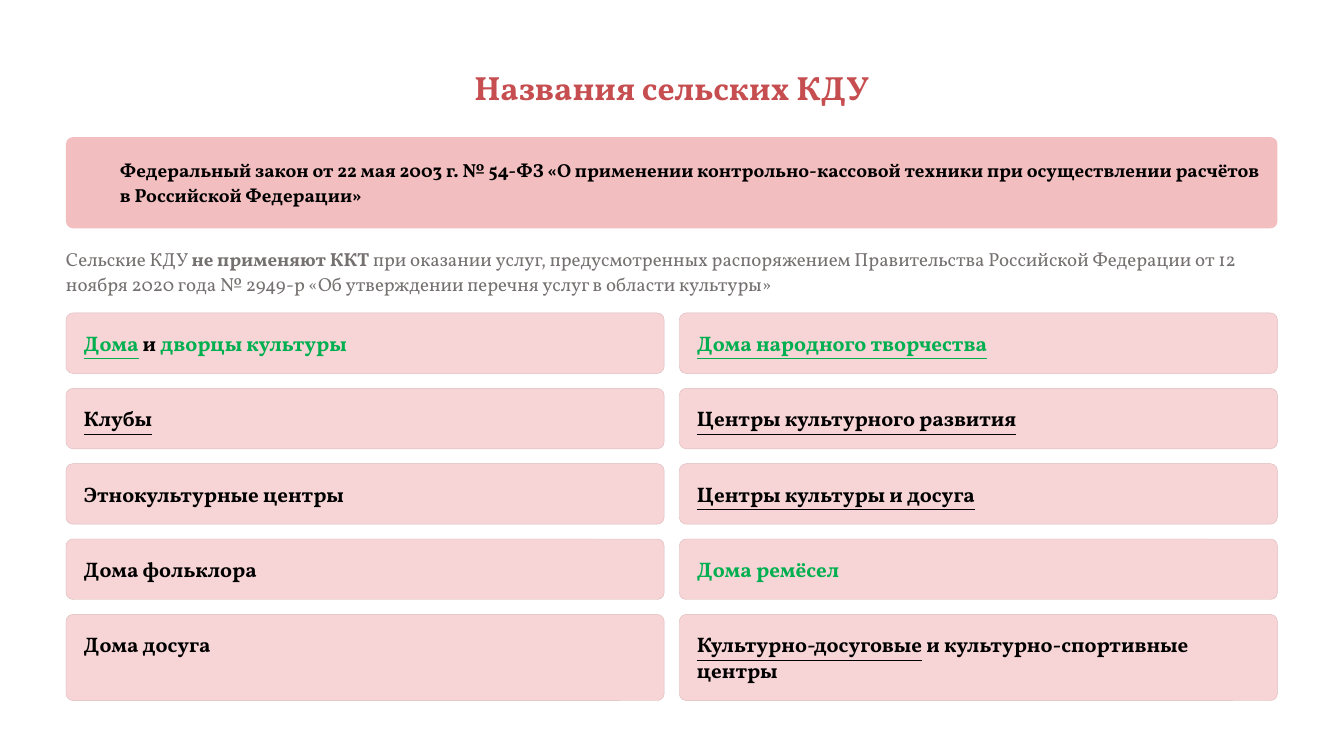
from pptx import Presentation
from pptx.dml.color import RGBColor
from pptx.enum.shapes import MSO_SHAPE as SHAPE
from pptx.enum.text import MSO_ANCHOR as ANCHOR, PP_ALIGN as ALIGN
from pptx.util import Inches, Pt

FONT = "Vollkorn"
BLACK, GREEN, RED, GREY = "000000", "00B050", "C64E50", "767171"
LEFT, WIDTH = 1.31, 24.04


def rgb(value):
    return RGBColor.from_string(value)


def write(sp, runs, size, spacing, align=ALIGN.LEFT):
    """Fill a text shape with runs of (text, colour, bold, underline)."""
    tf = sp.text_frame
    tf.word_wrap = True
    tf.vertical_anchor = ANCHOR.TOP
    tf.margin_left = tf.margin_right = tf.margin_top = tf.margin_bottom = 0
    p = tf.paragraphs[0]
    p.alignment = align
    p.line_spacing = Pt(spacing)
    p.space_before = Pt(0)
    for text, colour, bold, underline in runs:
        r = p.add_run()
        r.text = text
        r.font.name = FONT
        r.font.size = Pt(size)
        r.font.bold = bold
        r.font.underline = underline
        r.font.color.rgb = rgb(colour)


prs = Presentation()
prs.slide_width, prs.slide_height = Inches(26.67), Inches(15)
s = prs.slides.add_slide(prs.slide_layouts[5])
s.background.fill.solid()
s.background.fill.fore_color.rgb = rgb("FFFFFF")

# Title
title = s.shapes.title
title.left, title.top = Inches(LEFT), Inches(1.1)
title.width, title.height = Inches(WIDTH), Inches(1.03)
write(title, [("Названия сельских КДУ", RED, True, False)], 48, 73.3, ALIGN.CENTER)

# Law banner
banner = s.shapes.add_shape(SHAPE.ROUNDED_RECTANGLE, Inches(LEFT), Inches(2.72),
                            Inches(WIDTH), Inches(1.81))
banner.adjustments[0] = 0.076
banner.shadow.inherit = False
banner.fill.solid()
banner.fill.fore_color.rgb = rgb("F3BEC0")
banner.line.fill.background()
law = s.shapes.add_textbox(Inches(2.38), Inches(3.1), Inches(22.65), Inches(1))
write(law, [("Федеральный закон от 22 мая 2003 г. № 54-ФЗ «О применении "
             "контрольно-кассовой техники при осуществлении расчётов "
             "в Российской Федерации»", BLACK, True, False)], 27, 35.8)

# Explanation
note = s.shapes.add_textbox(Inches(LEFT), Inches(4.87), Inches(WIDTH), Inches(1))
write(note, [
    ("Сельские КДУ ", GREY, False, False),
    ("не применяют ККТ", GREY, True, False),
    (" при оказании услуг, предусмотренных распоряжением Правительства "
     "Российской Федерации от 12 ноября 2020 года № 2949-р «Об утверждении "
     "перечня услуг в области культуры»", GREY, False, False),
], 27, 35.8)

# Cards: rows of two, each card a list of (text, colour, underline)
rows = [
    ([("Дома", GREEN, True), (" и ", BLACK, False), ("дворцы культуры", GREEN, False)],
     [("Дома народного творчества", GREEN, True)]),
    ([("Клубы", BLACK, True)],
     [("Центры культурного развития", BLACK, True)]),
    ([("Этнокультурные центры", BLACK, False)],
     [("Центры культуры и досуга", BLACK, True)]),
    ([("Дома фольклора", BLACK, False)],
     [("Дома ремёсел", GREEN, False)]),
    ([("Дома досуга", BLACK, False)],
     [("Культурно-досуговые", BLACK, True),
      (" и культурно-спортивные центры", BLACK, False)]),
]
CARD_W, GAP, TOP, PITCH = 11.87, 0.3, 6.21, 1.495
PAD_X, PAD_Y = 0.35, 0.34
for i, row in enumerate(rows):
    y = TOP + i * PITCH
    height = 1.71 if i == len(rows) - 1 else 1.2
    for j, runs in enumerate(row):
        x = LEFT + j * (CARD_W + GAP)
        card = s.shapes.add_shape(SHAPE.ROUNDED_RECTANGLE, Inches(x), Inches(y),
                                  Inches(CARD_W), Inches(height))
        card.adjustments[0] = 0.138 / height
        card.shadow.inherit = False
        card.fill.solid()
        card.fill.fore_color.rgb = rgb("F7D4D5")
        card.line.color.rgb = rgb("DDBABB")
        card.line.width = Pt(0.6)
        label = s.shapes.add_textbox(Inches(x + PAD_X), Inches(y + PAD_Y),
                                     Inches(CARD_W - 2 * PAD_X),
                                     Inches(height - 2 * PAD_Y))
        write(label, [(text, colour, True, line) for text, colour, line in runs],
              30, 36.7)

prs.save("out.pptx")
